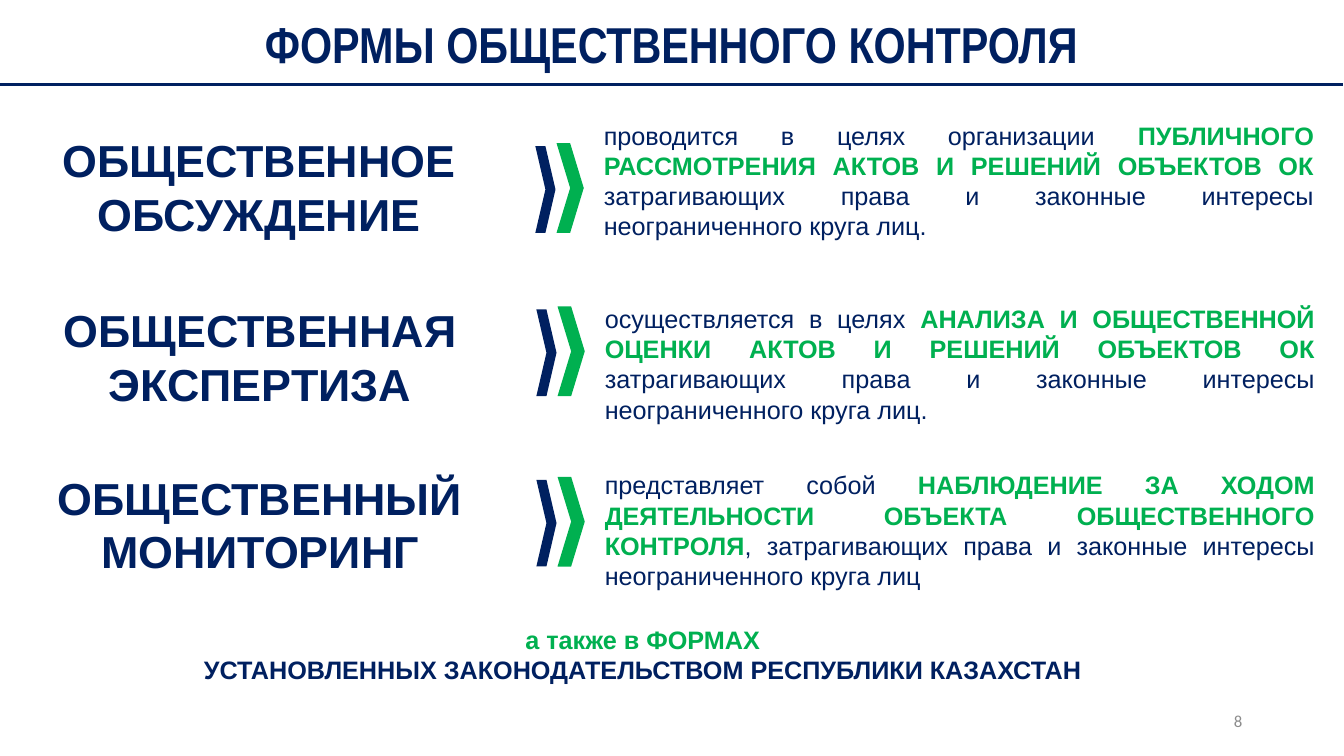
from pptx import Presentation
from pptx.dml.color import RGBColor
from pptx.enum.shapes import MSO_CONNECTOR as Connector
from pptx.enum.text import MSO_ANCHOR as Anchor, MSO_AUTO_SIZE as AutoSize, PP_ALIGN as Align
from pptx.util import Inches, Pt
from lxml.etree import SubElement
from pptx.oxml.ns import qn

NAVY, GREEN, GREY = "002060", "00B050", "8C8C8C"

TITLE = "ФОРМЫ ОБЩЕСТВЕННОГО КОНТРОЛЯ"
FORMS = [
    {
        "name": "ОБЩЕСТВЕННОЕ ОБСУЖДЕНИЕ",
        "description": [
            ("проводится в целях организации ", NAVY, False),
            ("ПУБЛИЧНОГО РАССМОТРЕНИЯ АКТОВ И РЕШЕНИЙ ОБЪЕКТОВ ОК ", GREEN, True),
            ("затрагивающих права и законные интересы неограниченного круга лиц.", NAVY, False),
        ],
        "left": 0.44, "name_top": 1.26, "description_top": 1.14, "chevron_top": 1.42,
    },
    {
        "name": "ОБЩЕСТВЕННАЯ ЭКСПЕРТИЗА",
        "description": [
            ("осуществляется в целях ", NAVY, False),
            ("АНАЛИЗА И ОБЩЕСТВЕННОЙ ОЦЕНКИ АКТОВ И РЕШЕНИЙ ОБЪЕКТОВ ОК ", GREEN, True),
            ("затрагивающих права и законные интересы неограниченного круга лиц.", NAVY, False),
        ],
        "left": 0.45, "name_top": 2.95, "description_top": 2.96, "chevron_top": 3.04,
    },
    {
        "name": "ОБЩЕСТВЕННЫЙ МОНИТОРИНГ",
        "description": [
            ("представляет собой ", NAVY, False),
            ("НАБЛЮДЕНИЕ ЗА ХОДОМ ДЕЯТЕЛЬНОСТИ ОБЪЕКТА ОБЩЕСТВЕННОГО КОНТРОЛЯ", GREEN, True),
            (", затрагивающих права и законные интересы неограниченного круга лиц", NAVY, False),
        ],
        "left": 0.45, "name_top": 4.61, "description_top": 4.61, "chevron_top": 4.73,
    },
]
CLOSING = [
    [("а также в ФОРМАХ", GREEN, True)],
    [("УСТАНОВЛЕННЫХ ЗАКОНОДАТЕЛЬСТВОМ РЕСПУБЛИКИ КАЗАХСТАН", NAVY, True)],
]
PAGE_NUMBER = "8"
DESCRIPTION_OFFSET = 5.45
CHEVRONS = [
    {"offset": 4.87, "drop": 0.03, "width": 0.2, "height": 0.86, "color": NAVY},
    {"offset": 5.08, "drop": 0, "width": 0.27, "height": 0.89, "color": GREEN},
]


def rgb(color):
    return RGBColor.from_string(color)


def set_attributes(target, values):
    for name, value in values.items():
        setattr(target, name, value)


def write_text(shape, paragraphs, size, font="Arial", align=Align.CENTER, anchor=Anchor.TOP):
    frame = shape.text_frame
    set_attributes(frame, {"word_wrap": True, "auto_size": AutoSize.NONE, "vertical_anchor": anchor})
    for index, runs in enumerate(paragraphs):
        paragraph = frame.add_paragraph() if index else frame.paragraphs[0]
        paragraph.alignment = align
        for text, color, bold in runs:
            run = paragraph.add_run()
            run.text = text
            set_attributes(run.font, {"name": font, "size": Pt(size), "bold": bold})
            run.font.color.rgb = rgb(color)


def add_text(slide, box, paragraphs, size, **options):
    shape = slide.shapes.add_textbox(*map(Inches, box))
    write_text(shape, paragraphs, size, **options)


def add_chevron(slide, left, top, width, height, color):
    middle, right = left + width / 2, left + width
    center, bottom = top + height / 2, top + height
    points = [(middle, top), (right, center), (middle, bottom), (left, bottom), (middle, center)]
    builder = slide.shapes.build_freeform(Inches(left), Inches(top))
    builder.add_line_segments([(Inches(x), Inches(y)) for x, y in points], close=True)
    shape = builder.convert_to_shape()
    shape.shadow.inherit = False
    shape.fill.solid()
    shape.fill.fore_color.rgb = rgb(color)
    shape.line.fill.background()


def add_title(slide):
    title = slide.shapes.title
    set_attributes(title, {
        "left": Inches(0), "top": Inches(0.08), "width": Inches(13.32), "height": Inches(0.71),
    })
    write_text(title, [[(TITLE, NAVY, True)]], 36, font="Arial Narrow", anchor=Anchor.MIDDLE)
    rule = slide.shapes.add_connector(
        Connector.STRAIGHT, Inches(0), Inches(0.84), Inches(13.32), Inches(0.84))
    rule.line.color.rgb = rgb(NAVY)
    rule.line.width = Pt(2.25)
    SubElement(rule.element.spPr, qn("a:effectLst"))


def add_form(slide, form):
    left = form["left"]
    add_text(slide, (left, form["name_top"], 4.26, 1.18), [[(form["name"], NAVY, True)]], 32,
             anchor=Anchor.MIDDLE)
    add_text(slide, (left + DESCRIPTION_OFFSET, form["description_top"], 7.24, 1.31),
             [form["description"]], 18, align=Align.JUSTIFY)
    for chevron in CHEVRONS:
        add_chevron(slide, left + chevron["offset"], form["chevron_top"] + chevron["drop"],
                    chevron["width"], chevron["height"], chevron["color"])


def main():
    presentation = Presentation()
    set_attributes(presentation, {"slide_width": Inches(13.33), "slide_height": Inches(7.5)})
    slide = presentation.slides.add_slide(presentation.slide_layouts[5])
    add_title(slide)
    for form in FORMS:
        add_form(slide, form)
    add_text(slide, (1.84, 6.14, 9.07, 0.71), CLOSING, 18)
    add_text(slide, (9.42, 6.95, 3, 0.4), [[(PAGE_NUMBER, GREY, False)]], 12,
             font="Calibri", align=Align.RIGHT, anchor=Anchor.MIDDLE)
    presentation.save("out.pptx")


if __name__ == "__main__":
    main()
